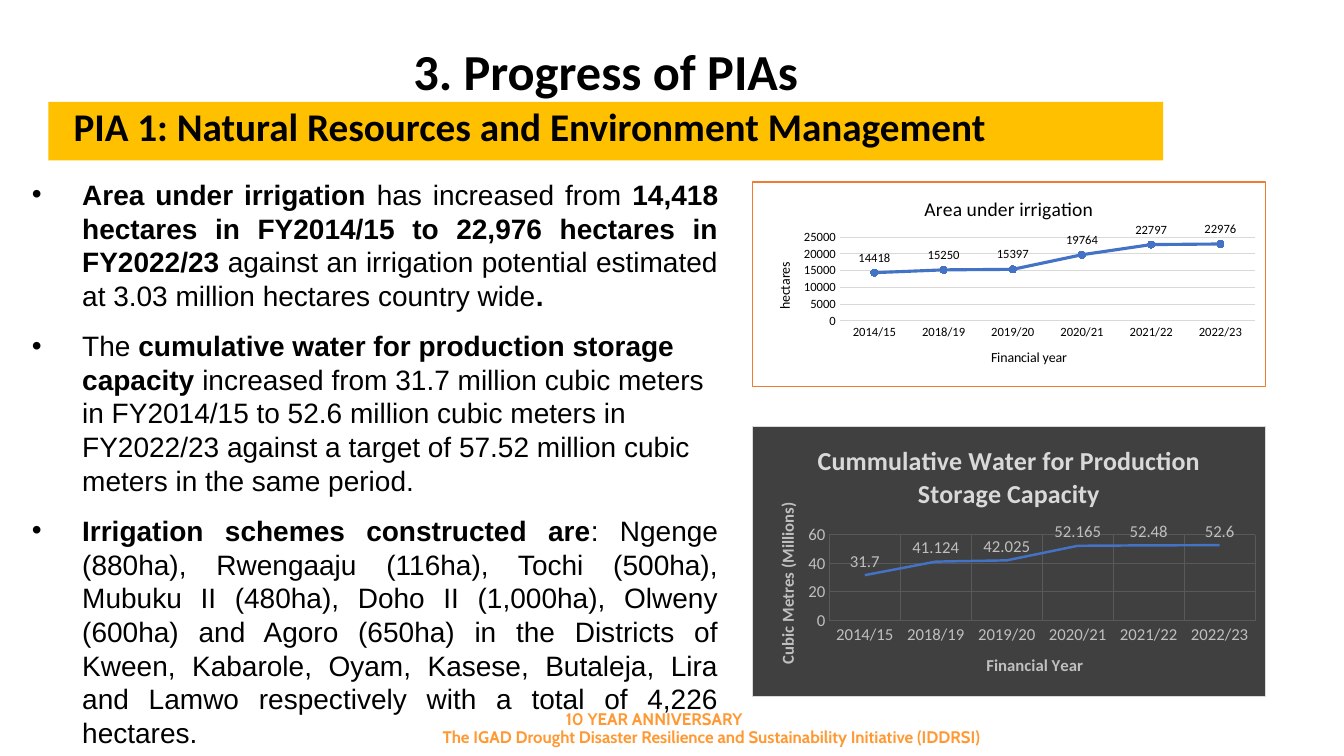
"""Build the slide on irrigation and water storage progress."""
from lxml import etree
from pptx import Presentation
from pptx.chart.data import CategoryChartData
from pptx.dml.color import RGBColor
from pptx.enum.chart import XL_CHART_TYPE, XL_LABEL_POSITION, XL_MARKER_STYLE, XL_TICK_MARK
from pptx.enum.shapes import MSO_SHAPE
from pptx.enum.text import MSO_ANCHOR, MSO_AUTO_SIZE, PP_ALIGN
from pptx.oxml import parse_xml
from pptx.oxml.ns import nsdecls, qn
from pptx.util import Pt

CENTER, JUSTIFY, LEFT = PP_ALIGN.CENTER, PP_ALIGN.JUSTIFY, PP_ALIGN.LEFT
TOP, MIDDLE = MSO_ANCHOR.TOP, MSO_ANCHOR.MIDDLE
NO_FIT = MSO_AUTO_SIZE.NONE
LINE, LINE_MARKERS = XL_CHART_TYPE.LINE, XL_CHART_TYPE.LINE_MARKERS
ABOVE, NO_TICK = XL_LABEL_POSITION.ABOVE, XL_TICK_MARK.NONE
CIRCLE, NO_MARKER = XL_MARKER_STYLE.CIRCLE, XL_MARKER_STYLE.NONE
rgb = RGBColor.from_string


def style(target, color=None, **values):
    """Set attributes from values, and the colour if one is given."""
    for name, value in values.items():
        setattr(target, name, value)
    if color:
        target.color.rgb = rgb(color)


def arrange(element, **fractions):
    """Give a chart part a manual place, in fractions of the chart."""
    layout = element.find(qn("c:layout"))
    if layout is None:
        layout = parse_xml(f"<c:layout {nsdecls('c')}/>")
        element.insert(0, layout)
    manual = etree.SubElement(layout, qn("c:manualLayout"))
    if "w" in fractions:
        etree.SubElement(manual, qn("c:layoutTarget")).set("val", "inner")
    for name in ("xMode", "yMode"):
        etree.SubElement(manual, qn(f"c:{name}")).set("val", "edge")
    for name, value in fractions.items():
        etree.SubElement(manual, qn(f"c:{name}")).set("val", str(value))


prs = Presentation()
prs.slide_width, prs.slide_height = Pt(960), Pt(540)
s = prs.slides.add_slide(prs.slide_layouts[1])

footers = [
    ("10 YEAR ANNIVERSARY", 226.8, 502.6),
    ("The IGAD Drought Disaster Resilience and Sustainability Initiative (IDDRSI)", 267.8, 515.5),
]
for text, left, top in footers:
    tf = s.shapes.add_textbox(Pt(left), Pt(top), Pt(481), Pt(21.6)).text_frame
    tf.word_wrap = True
    p = tf.paragraphs[0]
    p.text, p.alignment = text, CENTER
    style(p.font, "FF9933", name="Cabin", size=Pt(12), bold=True)

title = s.shapes.title
body = s.placeholders[1]
bar = s.shapes.add_shape(MSO_SHAPE.RECTANGLE, 0, 0, 0, 0)
bar.shadow.inherit = False
bar.fill.solid()
bar.fill.fore_color.rgb = rgb("FFC000")
bar.line.fill.background()
style(title, left=Pt(34.6), top=Pt(29.3), width=Pt(796.3), height=Pt(41.8))
style(bar, left=Pt(34.6), top=Pt(72.7), width=Pt(796.3), height=Pt(41.8))
style(body, left=Pt(15.5), top=Pt(123.1), width=Pt(504.7), height=Pt(419))

headings = [
    (title, "3. Progress of PIAs", 36, CENTER, MIDDLE, 0),
    (bar, "PIA 1: Natural Resources and Environment Management", 28, LEFT, TOP, 18),
]
for sp, text, size, align, anchor, inset in headings:
    tf = sp.text_frame
    style(tf, margin_left=Pt(inset), margin_right=0, margin_top=0, margin_bottom=0,
          word_wrap=True, auto_size=NO_FIT, vertical_anchor=anchor)
    p = tf.paragraphs[0]
    p.text, p.alignment = text, align
    style(p.font, "000000", name="Calibri", size=Pt(size), bold=True)

points = [
    (JUSTIFY, [
        ("Area under irrigation ", True),
        ("has increased from ", False),
        ("14,418 hectares in FY2014/15 to 22,976 hectares in FY2022/23 ", True),
        ("against an irrigation potential estimated at 3.03 million hectares country wide", False),
        (".", True)]),
    (LEFT, [
        ("The ", False),
        ("cumulative water for production storage capacity ", True),
        ("increased from 31.7 million cubic meters in FY2014/15 to 52.6 million cubic meters "
         "in FY2022/23 against a target of 57.52 million cubic meters in the same period.", False)]),
    (JUSTIFY, [
        ("Irrigation schemes constructed are", True),
        (": Ngenge (880ha), Rwengaaju (116ha), Tochi (500ha), Mubuku II (480ha), "
         "Doho II (1,000ha), Olweny (600ha) and Agoro (650ha) in the Districts of Kween, "
         "Kabarole, Oyam, Kasese, Butaleja, Lira and Lamwo respectively with a total of "
         "4,226 hectares.", False)]),
]
tf = body.text_frame
style(tf, word_wrap=True, auto_size=NO_FIT, vertical_anchor=TOP)
for i, (align, runs) in enumerate(points):
    p = tf.add_paragraph() if i else tf.paragraphs[0]
    style(p, alignment=align, line_spacing=1.0, space_before=Pt(6 if i else 0), space_after=Pt(6))
    pPr = p._p.get_or_add_pPr()
    pPr.set("marL", str(Pt(36)))
    pPr.set("indent", str(Pt(-36)))
    for text, bold in runs:
        r = p.add_run()
        r.text = text
        style(r.font, "000000", name="Arial", size=Pt(20), bold=bold)

years = ["2014/15", "2018/19", "2019/20", "2020/21", "2021/22", "2022/23"]
charts = [
    dict(kind=LINE_MARKERS, top=129.6, height=146.9, values=[14418, 15250, 15397, 19764, 22797, 22976],
         title="Area under irrigation", title_size=14, title_color="000000", bold=False,
         cat="Financial year", cat_at=(0.46, 0.8), val="hectares", val_at=(0.04, 0.38),
         axis_size=10, size=9, color="000000", fill="FFFFFF", border=("ED7D31", 1),
         grid="D9D9D9", cat_grid=False, limit=25000, step=5000, width=2.25, marker=CIRCLE,
         plot=dict(x=0.17, y=0.27, w=0.81, h=0.41)),
    dict(kind=LINE, top=304.6, height=193, values=[31.7, 41.124, 42.025, 52.165, 52.48, 52.6],
         title="Cummulative Water for Production Storage Capacity",
         title_size=18.6, title_color="D9D9D9", bold=True,
         cat="Financial Year", cat_at=(0.45, 0.83), val="Cubic Metres (Millions)", val_at=(0.04, 0.27),
         axis_size=12, size=12, color="BFBFBF", fill="404040", border=("D9D9D9", 0.75),
         grid="595959", cat_grid=True, limit=60, step=20, width=1.75, marker=NO_MARKER,
         plot=dict(x=0.15, y=0.4, w=0.83, h=0.32)),
]
for c in charts:
    data = CategoryChartData()
    data.categories = years
    data.add_series("Series 1", c["values"])
    chart = s.shapes.add_chart(c["kind"], Pt(537.1), Pt(c["top"]), Pt(367.2), Pt(c["height"]), data).chart
    chart.has_legend = False
    style(chart.font, c["color"], name="Calibri", size=Pt(c["size"]))
    border, weight = c["border"]
    chart._chartSpace.find(qn("c:txPr")).addprevious(parse_xml(
        f'<c:spPr {nsdecls("c", "a")}><a:solidFill><a:srgbClr val="{c["fill"]}"/></a:solidFill>'
        f'<a:ln w="{Pt(weight)}"><a:solidFill><a:srgbClr val="{border}"/></a:solidFill></a:ln></c:spPr>'))
    arrange(chart._chartSpace.chart.plotArea, **c["plot"])

    cat, val = chart.category_axis, chart.value_axis
    style(val, minimum_scale=0, maximum_scale=c["limit"], major_unit=c["step"])
    cat.has_major_gridlines = c["cat_grid"]
    for axis in (cat, val):
        style(axis, major_tick_mark=NO_TICK, minor_tick_mark=NO_TICK)
        style(axis.tick_labels.font, c["color"], name="Calibri", size=Pt(c["size"]))
        axis.format.line.fill.background()
        if axis.has_major_gridlines:
            style(axis.major_gridlines.format.line, c["grid"], width=Pt(0.75))
    if not c["cat_grid"]:
        style(cat.format.line, c["grid"], width=Pt(0.75))

    titles = [
        (chart.chart_title, c["title"], c["title_size"], c["title_color"], None),
        (cat.axis_title, c["cat"], c["axis_size"], c["color"], c["cat_at"]),
        (val.axis_title, c["val"], c["axis_size"], c["color"], c["val_at"]),
    ]
    for heading, text, size, color, at in titles:
        tf = heading.text_frame
        tf.text = text
        style(tf.paragraphs[0].runs[0].font, color, name="Calibri", size=Pt(size), bold=c["bold"])
        if at:
            arrange(heading._element, x=at[0], y=at[1])
    bodyPr = val.axis_title.text_frame._txBody.find(qn("a:bodyPr"))
    bodyPr.set("rot", "-5400000")
    bodyPr.set("vert", "horz")

    plot = chart.plots[0]
    plot.vary_by_categories = False
    series = plot.series[0]
    series.smooth = False
    style(series.format.line, "4472C4", width=Pt(c["width"]))
    series.marker.style = c["marker"]
    if c["marker"] == CIRCLE:
        series.marker.size = 5
        series.marker.format.fill.solid()
        series.marker.format.fill.fore_color.rgb = rgb("4472C4")
        style(series.marker.format.line, "4472C4")
    style(series.data_labels, show_value=True, position=ABOVE)
    style(series.data_labels.font, c["color"], name="Calibri", size=Pt(c["size"]))

prs.save("out.pptx")
